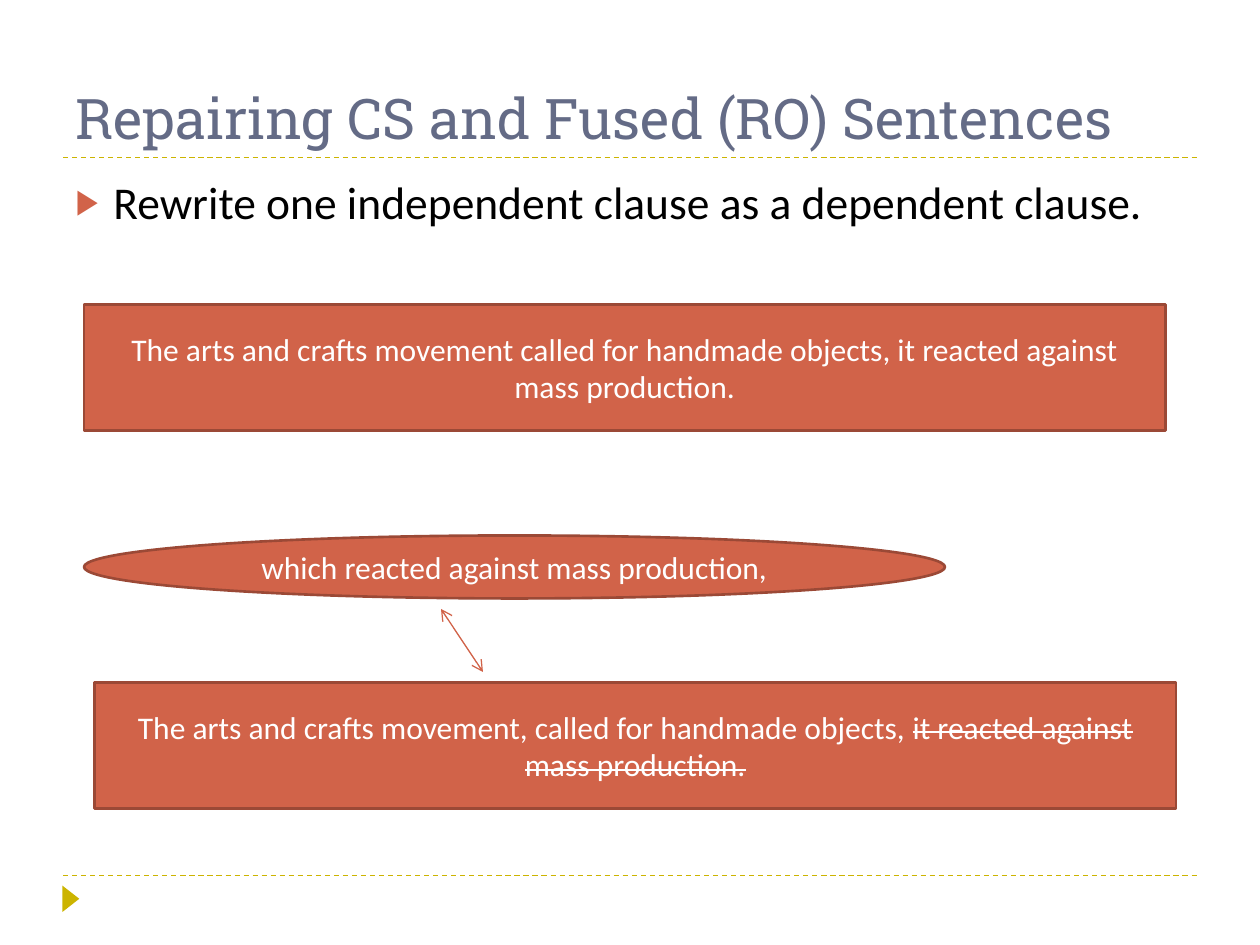
from lxml.etree import SubElement
from pptx import Presentation
from pptx.dml.color import RGBColor
from pptx.enum.dml import MSO_LINE
from pptx.enum.shapes import MSO_CONNECTOR, MSO_SHAPE
from pptx.enum.text import MSO_ANCHOR, MSO_AUTO_SIZE, PP_ALIGN
from pptx.oxml.ns import qn
from pptx.util import Inches, Pt

UNITS_PER_INCH = 12
BODY_FONT = "Calibri"
TITLE_FONT = "Roboto Slab"
ACCENT = "D16349"
ACCENT_EDGE = "9B4936"
GOLD = "CCB400"
SLATE = "646B86"
WHITE = "FFFFFF"
BLACK = "000000"


def color(hex_string):
    return RGBColor.from_string(hex_string)


def grid(*units):
    return [Inches(unit / UNITS_PER_INCH) for unit in units]


class SlideBuilder:
    def __init__(self, presentation):
        self.slide = presentation.slides.add_slide(presentation.slide_layouts[1])

    def add_run(self, paragraph, text, size, font_name, hex_string, strike=False):
        run = paragraph.add_run()
        run.text = text
        run.font.size = Pt(size)
        run.font.name = font_name
        run.font.color.rgb = color(hex_string)
        if strike:
            run._r.get_or_add_rPr().set("strike", "sngStrike")

    def place(self, placeholder, box, anchor):
        placeholder.left, placeholder.top, placeholder.width, placeholder.height = grid(*box)
        frame = placeholder.text_frame
        frame.auto_size = MSO_AUTO_SIZE.NONE
        frame.vertical_anchor = anchor
        paragraph = frame.paragraphs[0]
        paragraph.alignment = PP_ALIGN.LEFT
        return paragraph

    def title(self, text, box):
        paragraph = self.place(self.slide.shapes.title, box, MSO_ANCHOR.BOTTOM)
        self.add_run(paragraph, text, 32, TITLE_FONT, SLATE)

    def bullet(self, text, box):
        paragraph = self.place(self.slide.placeholders[1], box, MSO_ANCHOR.TOP)
        paragraph.space_before = Pt(6)
        properties = paragraph._p.get_or_add_pPr()
        properties.set("marL", str(Inches(0.3)))
        properties.set("indent", str(Inches(-0.3)))
        bullet_color = SubElement(properties, qn("a:buClr"))
        SubElement(bullet_color, qn("a:srgbClr"), val=ACCENT)
        SubElement(properties, qn("a:buSzPct"), val="76000")
        SubElement(properties, qn("a:buChar"), char="▶")
        self.add_run(paragraph, text, 26, BODY_FONT, BLACK)

    def shape(self, kind, box, fill):
        shape = self.slide.shapes.add_shape(kind, *grid(*box))
        shape.shadow.inherit = False
        shape.fill.solid()
        shape.fill.fore_color.rgb = color(fill)
        shape.line.fill.background()
        return shape

    def sentence(self, kind, box, text, struck_text=None):
        shape = self.shape(kind, box, ACCENT)
        shape.line.color.rgb = color(ACCENT_EDGE)
        shape.line.width = Pt(1.5)
        frame = shape.text_frame
        frame.word_wrap = True
        frame.vertical_anchor = MSO_ANCHOR.MIDDLE
        paragraph = frame.paragraphs[0]
        paragraph.alignment = PP_ALIGN.CENTER
        self.add_run(paragraph, text, 18, BODY_FONT, WHITE)
        if struck_text:
            self.add_run(paragraph, struck_text, 18, BODY_FONT, WHITE, strike=True)

    def line(self, ends, hex_string):
        connector = self.slide.shapes.add_connector(MSO_CONNECTOR.STRAIGHT, *grid(*ends))
        connector.line.color.rgb = color(hex_string)
        connector.line.width = Pt(0.75)
        SubElement(connector._element.spPr, qn("a:effectLst"))
        return connector

    def dashed_rule(self, row):
        self.line((6, row, 114, row), GOLD).line.dash_style = MSO_LINE.DASH

    def double_arrow(self, ends):
        outline = self.line(ends, ACCENT).line._get_or_add_ln()
        for end in ("a:headEnd", "a:tailEnd"):
            SubElement(outline, qn(end), type="arrow")


def main():
    presentation = Presentation()
    presentation.slide_width = Inches(10)
    presentation.slide_height = Inches(7.5)
    builder = SlideBuilder(presentation)

    for row in (83.4, 15):
        builder.dashed_rule(row)
    marker = builder.shape(MSO_SHAPE.ISOSCELES_TRIANGLE, (5.5, 84.8, 2.5, 1.6), GOLD)
    marker.rotation = 90

    builder.title("Repairing CS and Fused (RO) Sentences", (6, 2, 108, 13))
    builder.bullet("Rewrite one independent clause as a dependent clause.", (6, 16, 108, 64.8))

    builder.sentence(
        MSO_SHAPE.RECTANGLE,
        (8, 29, 103, 12),
        "The arts and crafts movement called for handmade objects, it reacted against mass production.",
    )
    builder.sentence(
        MSO_SHAPE.RECTANGLE,
        (9, 65, 103, 12),
        "The arts and crafts movement, called for handmade objects, ",
        "it reacted against mass production.",
    )
    builder.sentence(MSO_SHAPE.OVAL, (8, 51, 82, 6), "which reacted against mass production,")
    builder.double_arrow((42, 58, 46, 64))

    presentation.save("out.pptx")


if __name__ == "__main__":
    main()
